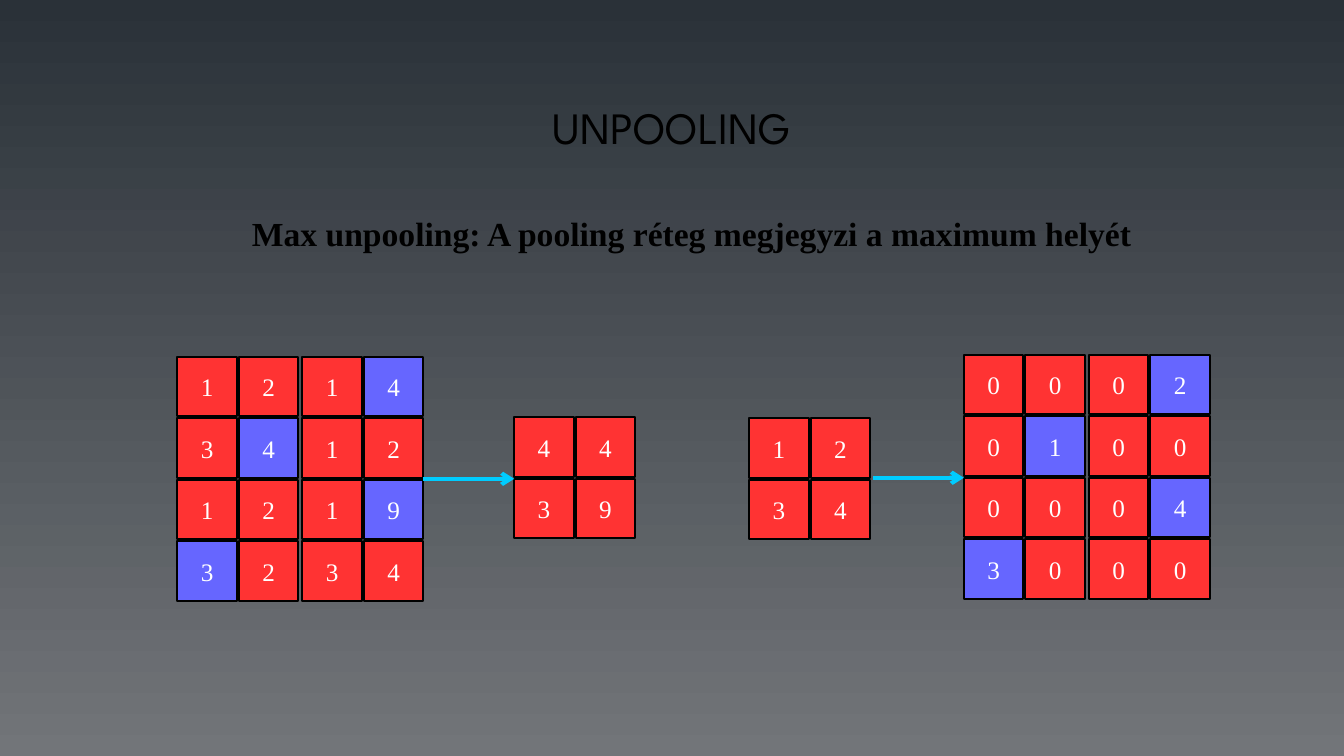
from lxml.etree import SubElement
from pptx import Presentation
from pptx.dml.color import RGBColor
from pptx.enum.shapes import MSO_CONNECTOR, MSO_SHAPE
from pptx.enum.text import MSO_ANCHOR, PP_ALIGN
from pptx.oxml.ns import qn
from pptx.util import Inches, Pt

CELL = 0.59
PITCH = 0.61
POOL = 2
POOL_GAP = 0.02


def rgb(color):
    return RGBColor.from_string(color)


class Deck:
    body_font = "Times New Roman"
    title_font = "League Spartan"
    black, white = "000000", "FFFFFF"
    red, blue, cyan = "FF3333", "6666FF", "00CCFF"

    def __init__(self, prs):
        self.s = prs.slides.add_slide(prs.slide_layouts[6])

    def background(self, top, bottom):
        fill = self.s.background.fill
        fill.gradient()
        fill.gradient_angle = 270
        for stop, color in zip(fill.gradient_stops, (top, bottom)):
            stop.color.rgb = rgb(color)

    def set_text(self, sp, text, size, font, color, align, bold=False):
        tf = sp.text_frame
        tf.text = text
        p = tf.paragraphs[0]
        p.alignment = align
        r = p.runs[0]
        r.font.size = Pt(size)
        r.font.name = font
        r.font.bold = bold
        r.font.color.rgb = rgb(color)
        return tf

    def text(self, box, text, size, font, align, anchor, bold=False):
        sp = self.s.shapes.add_textbox(*map(Inches, box))
        tf = self.set_text(sp, text, size, font, self.black, align, bold)
        tf.word_wrap = True
        tf.vertical_anchor = anchor

    def cell(self, x, y, value, color):
        sp = self.s.shapes.add_shape(
            MSO_SHAPE.RECTANGLE, Inches(x), Inches(y), Inches(CELL), Inches(CELL))
        sp.shadow.inherit = False
        sp.fill.solid()
        sp.fill.fore_color.rgb = rgb(color)
        sp.line.color.rgb = rgb(self.black)
        sp.line.width = Pt(1.45)
        tf = self.set_text(sp, str(value), 18, self.body_font, self.white, PP_ALIGN.CENTER)
        tf.word_wrap = False
        tf.vertical_anchor = MSO_ANCHOR.MIDDLE
        tf.margin_left = tf.margin_right = Inches(0.11)
        tf.margin_top = tf.margin_bottom = Inches(0.06)

    def matrix(self, left, top, rows, mark_maxima=False):
        """Draw a grid of cells, optionally marking the maximum of each pooling window."""
        for i, row in enumerate(rows):
            for j, value in enumerate(row):
                i0, j0 = i // POOL * POOL, j // POOL * POOL
                window = [v for line in rows[i0:i0 + POOL] for v in line[j0:j0 + POOL]]
                marked = mark_maxima and value == max(window)
                x = left + j * PITCH + j // POOL * POOL_GAP
                self.cell(x, top + i * PITCH, value, self.blue if marked else self.red)

    def arrow(self, x, y, length):
        c = self.s.shapes.add_connector(
            MSO_CONNECTOR.STRAIGHT, Inches(x), Inches(y), Inches(x + length), Inches(y))
        c.line.color.rgb = rgb(self.cyan)
        c.line.width = Pt(2.89)
        props = c.element.spPr
        SubElement(props.find(qn("a:ln")), qn("a:tailEnd"), type="arrow")
        SubElement(props, qn("a:effectLst"))


def main():
    prs = Presentation()
    prs.slide_width, prs.slide_height = Inches(13.33), Inches(7.5)
    deck = Deck(prs)
    deck.background("2A3138", "727579")

    deck.text((1.25, 0.67, 10.83, 1.17), "UNPOOLING", 32, deck.title_font,
              PP_ALIGN.CENTER, MSO_ANCHOR.MIDDLE)
    deck.text((2.4, 2.06, 9.4, 1.18),
              "Max unpooling: A pooling réteg megjegyzi a maximum helyét",
              24, deck.body_font, PP_ALIGN.LEFT, MSO_ANCHOR.TOP, bold=True)

    deck.matrix(7.43, 4.15, [[1, 2], [3, 4]])
    deck.matrix(9.56, 3.52, [[0, 0, 0, 2], [0, 1, 0, 0], [0, 0, 0, 4], [3, 0, 0, 0]],
                mark_maxima=True)
    deck.arrow(8.66, 4.74, 0.9)

    deck.matrix(1.76, 3.54, [[1, 2, 1, 4], [3, 4, 1, 2], [1, 2, 1, 9], [3, 2, 3, 4]],
                mark_maxima=True)
    deck.matrix(5.1, 4.14, [[4, 4], [3, 9]])
    deck.arrow(4.2, 4.75, 0.9)

    prs.save("out.pptx")


if __name__ == "__main__":
    main()
